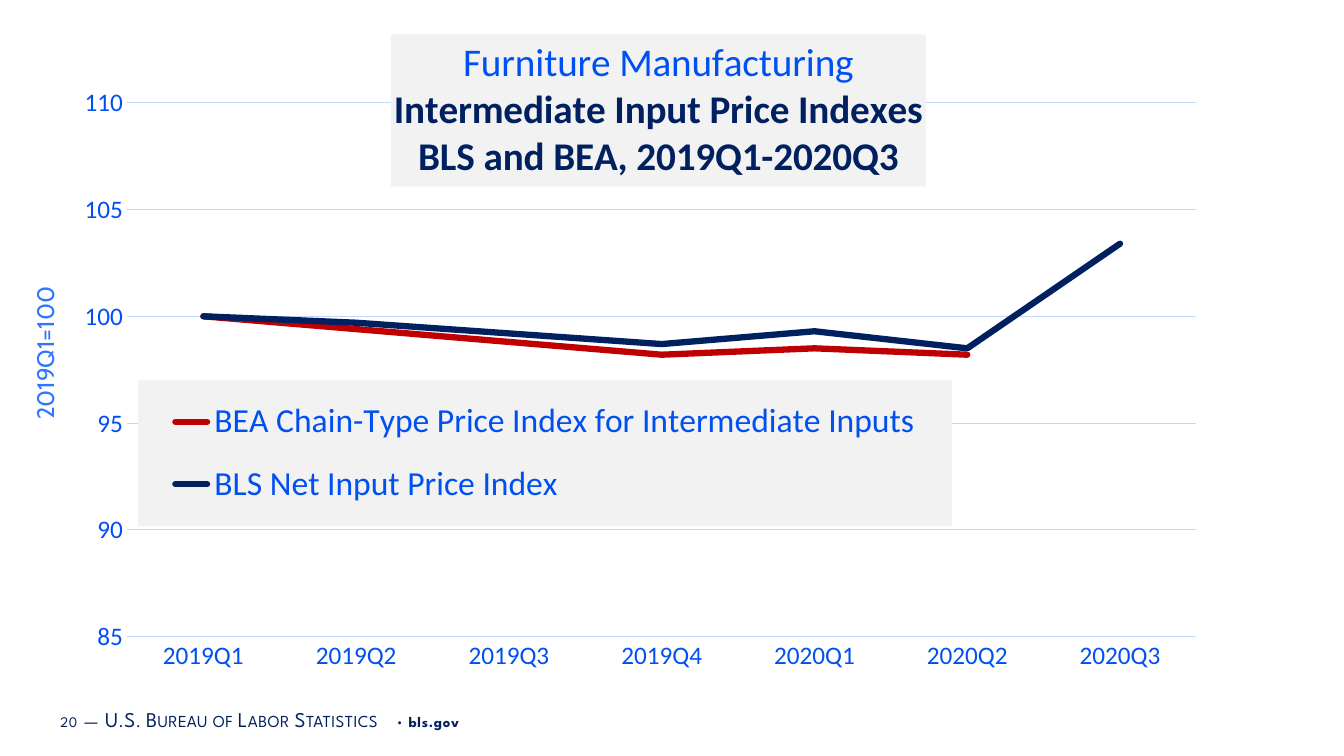
"""Build the furniture manufacturing input price index slide."""
from dataclasses import dataclass, field
from typing import Any

from lxml import etree
from pptx import Presentation
from pptx.chart.data import CategoryChartData
from pptx.dml.color import RGBColor
from pptx.enum.chart import XL_CHART_TYPE, XL_LEGEND_POSITION, XL_TICK_MARK
from pptx.enum.text import MSO_ANCHOR, PP_ALIGN
from pptx.oxml import parse_xml
from pptx.oxml.ns import nsdecls, qn
from pptx.util import Pt

LINE_CHART = XL_CHART_TYPE.LINE
LEGEND_BOTTOM = XL_LEGEND_POSITION.BOTTOM
NO_TICK = XL_TICK_MARK.NONE
MIDDLE = MSO_ANCHOR.MIDDLE
CENTER = PP_ALIGN.CENTER
LEFT = PP_ALIGN.LEFT

NAVY = RGBColor(0x00, 0x20, 0x60)
BLUE = RGBColor(0x00, 0x50, 0xF1)
LIGHT_BLUE = RGBColor(0x30, 0x75, 0xFF)
GRID_BLUE = RGBColor(0xC1, 0xD6, 0xFF)
RED = RGBColor(0xC0, 0x00, 0x00)
PANEL_GRAY = RGBColor(0xF2, 0xF2, 0xF2)

QUARTERS = ["2019Q1", "2019Q2", "2019Q3", "2019Q4", "2020Q1", "2020Q2", "2020Q3"]


@dataclass(frozen=True)
class PriceIndex:
    name: str
    values: tuple
    color: RGBColor


@dataclass(frozen=True)
class TextRun:
    text: str
    font: dict
    attributes: dict = field(default_factory=dict)


@dataclass(frozen=True)
class TextBox:
    box: tuple
    runs: tuple
    margins: tuple = (7.2, 3.6)
    alignment: Any = LEFT
    line_spacing: float = 1.0
    rotation: float = 0


def footer_run(text: str, size: float, spacing: int, small: bool = False,
               bold: bool = False) -> TextRun:
    font = {"name": "League Spartan", "size": Pt(size), "bold": bold}
    attributes = {"spc": str(spacing), "cap": "small" if small else "none"}
    return TextRun(text, font | {"color": NAVY}, attributes)


def title_line(text: str, color: RGBColor, bold: bool) -> TextRun:
    return TextRun(text, {"name": "Calibri", "size": Pt(28), "bold": bold, "color": color})


INDEXES = (
    PriceIndex("BEA Chain-Type Price Index for Intermediate Inputs",
               (100, 99.4, 98.8, 98.2, 98.5, 98.2, None), RED),
    PriceIndex("BLS Net Input Price Index",
               (100, 99.7, 99.2, 98.7, 99.3, 98.5, 103.4), NAVY),
)
TITLE_LINES = (
    title_line("Furniture Manufacturing", BLUE, False),
    title_line("Intermediate Input Price Indexes", NAVY, True),
    title_line("BLS and BEA, 2019Q1-2020Q3", NAVY, True),
)
FOOTER = TextBox((38.16, 499, 609.84, 28.8), (
    footer_run("20", 10.5, 50),
    footer_run(" ", 16, 50),
    footer_run("—", 15, 30, small=True),
    footer_run(" ", 16, 50),
    footer_run("U.S. Bureau of Labor Statistics", 15, 30, small=True),
    footer_run(" • ", 10.5, 50),
    footer_run("bls.gov", 10.5, 50, bold=True),
), margins=(5, 2.9))
AXIS_LABEL = TextBox(
    (-25.2, 231.84, 118.08, 41.04),
    (TextRun("2019Q1=100", {"name": "Cabin", "size": Pt(17.1), "color": LIGHT_BLUE}),),
    alignment=CENTER, line_spacing=0.8, rotation=270)


def set_font(font: Any, values: dict) -> None:
    for name, value in values.items():
        if name == "color":
            font.color.rgb = value
        else:
            setattr(font, name, value)


def add_run(paragraph: Any, item: TextRun) -> None:
    run = paragraph.add_run()
    run.text = item.text
    set_font(run.font, item.font)
    for name, value in item.attributes.items():
        run.font._element.set(name, value)


def add_text(slide: Any, item: TextBox) -> None:
    shape = slide.shapes.add_textbox(*map(Pt, item.box))
    shape.rotation = item.rotation
    frame = shape.text_frame
    frame.word_wrap = True
    frame.vertical_anchor = MIDDLE
    frame.margin_left = frame.margin_right = Pt(item.margins[0])
    frame.margin_top = frame.margin_bottom = Pt(item.margins[1])
    paragraph = frame.paragraphs[0]
    paragraph.alignment = item.alignment
    paragraph.line_spacing = item.line_spacing
    for run in item.runs:
        add_run(paragraph, run)


def set_layout(element: Any, index: int, inner: bool = False, **fractions: float) -> None:
    for old_layout in element.findall(qn("c:layout")):
        element.remove(old_layout)
    layout = parse_xml(f"<c:layout {nsdecls('c')}><c:manualLayout/></c:layout>")
    values = {"layoutTarget": "inner"} if inner else {}
    values |= {"xMode": "edge", "yMode": "edge"} | fractions
    for name, value in values.items():
        etree.SubElement(layout[0], qn(f"c:{name}")).set("val", str(value))
    element.insert(index, layout)


def format_axis(axis: Any) -> None:
    axis.major_tick_mark = axis.minor_tick_mark = NO_TICK
    set_font(axis.tick_labels.font, {"name": "Calibri", "size": Pt(18), "color": BLUE})


def format_line(line: Any, color: RGBColor, width: float) -> None:
    line.color.rgb = color
    line.width = Pt(width)


def format_title(chart: Any) -> None:
    chart.has_title = True
    title = chart.chart_title
    frame = title.text_frame
    for index, item in enumerate(TITLE_LINES):
        paragraph = frame.add_paragraph() if index else frame.paragraphs[0]
        paragraph.alignment = CENTER
        add_run(paragraph, item)
    title.format.fill.solid()
    title.format.fill.fore_color.rgb = PANEL_GRAY
    set_layout(title._element, 1, x=0.27, y=0.03)


def format_legend(chart: Any) -> None:
    chart.has_legend = True
    legend = chart.legend
    legend.position = LEGEND_BOTTOM
    legend.include_in_layout = False
    set_font(legend.font, {"name": "Calibri", "size": Pt(24), "color": BLUE})
    element = legend._element
    set_layout(element, 1, x=0.0535, y=0.54, w=0.697, h=0.216)
    element.find(qn("c:txPr")).addprevious(parse_xml(
        f'<c:spPr {nsdecls("c", "a")}><a:solidFill><a:srgbClr val="{PANEL_GRAY}"/>'
        "</a:solidFill></c:spPr>"))


def add_price_chart(slide: Any) -> None:
    data = CategoryChartData()
    data.categories = QUARTERS
    for item in INDEXES:
        data.add_series(item.name, item.values)
    chart = slide.shapes.add_chart(LINE_CHART, *map(Pt, (54, 10, 834, 484)), data).chart
    set_font(chart.font, {"name": "Calibri", "size": Pt(10), "color": NAVY})
    chart.plots[0].vary_by_categories = False
    for series, item in zip(chart.plots[0].series, INDEXES):
        series.smooth = False
        format_line(series.format.line, item.color, 4.5)
        series._element.find(f"{qn('c:spPr')}/{qn('a:ln')}").set("cap", "rnd")
    format_axis(chart.category_axis)
    format_line(chart.category_axis.format.line, GRID_BLUE, 0.75)
    value_axis = chart.value_axis
    format_axis(value_axis)
    value_axis.minimum_scale, value_axis.maximum_scale, value_axis.major_unit = 85, 110, 5
    value_axis.format.line.fill.background()
    format_line(value_axis.major_gridlines.format.line, GRID_BLUE, 0.75)
    format_title(chart)
    format_legend(chart)
    plot_area = chart._chartSpace.chart.plotArea
    set_layout(plot_area, 0, inner=True, x=0.044, y=0.131, w=0.916, h=0.788)


def main() -> None:
    presentation = Presentation()
    presentation.slide_width, presentation.slide_height = Pt(960), Pt(540)
    slide = presentation.slides.add_slide(presentation.slide_layouts[6])
    add_text(slide, FOOTER)
    add_price_chart(slide)
    add_text(slide, AXIS_LABEL)
    presentation.save("out.pptx")


if __name__ == "__main__":
    main()
